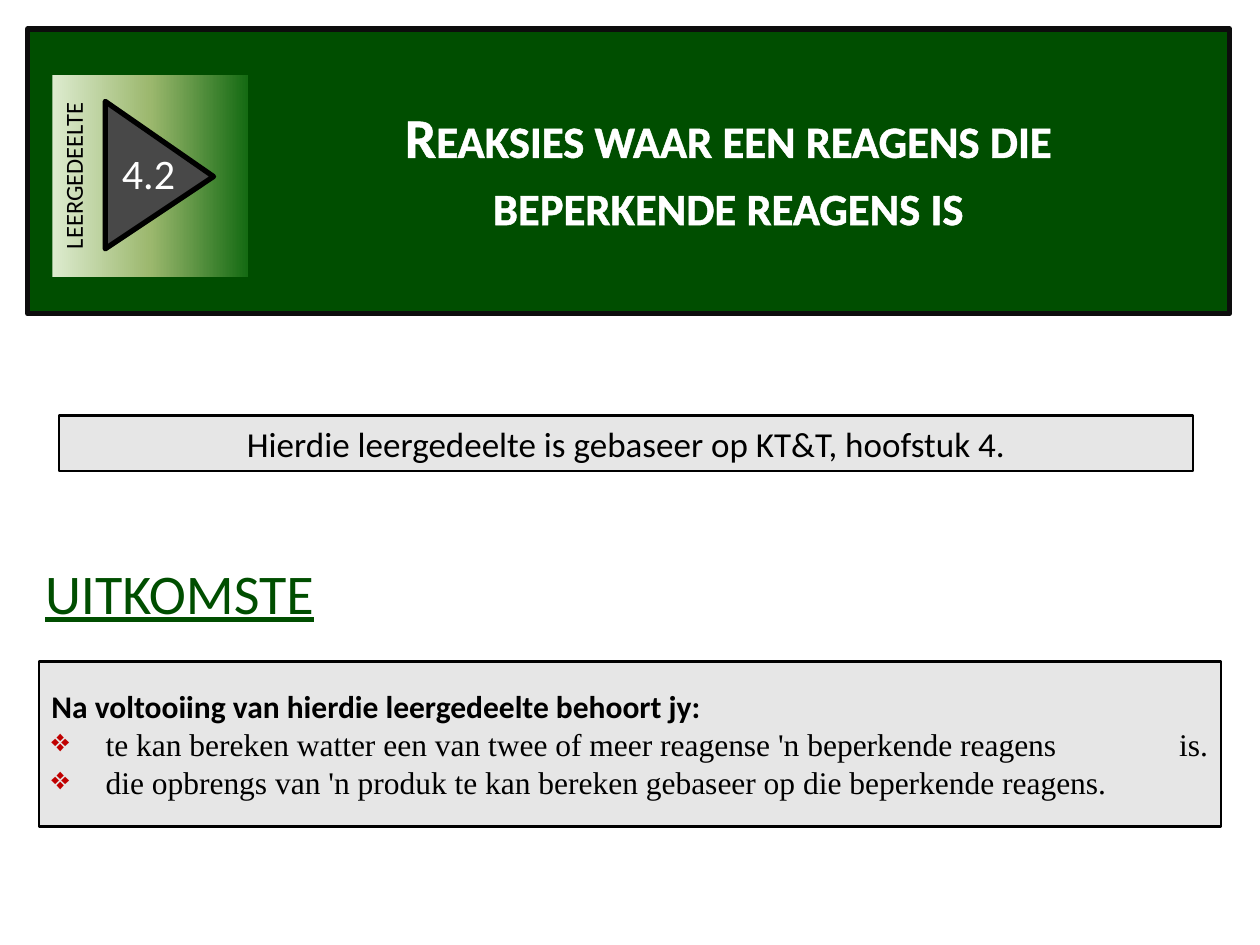
"""Build the opening slide of learning section 4.2 on limiting reagents."""
from lxml.etree import SubElement
from pptx import Presentation
from pptx.dml.color import RGBColor
from pptx.enum.shapes import MSO_SHAPE
from pptx.enum.text import MSO_ANCHOR, PP_ALIGN
from pptx.oxml import parse_xml
from pptx.oxml.ns import nsdecls, qn
from pptx.util import Inches, Pt

BLACK = RGBColor(0x00, 0x00, 0x00)
WHITE = RGBColor(0xFF, 0xFF, 0xFF)
GREEN = RGBColor(0x00, 0x4E, 0x00)
BANNER_EDGE = RGBColor(0x0D, 0x0D, 0x0D)
PANEL = RGBColor(0xE6, 0xE6, 0xE6)
ARROW = RGBColor(0x48, 0x48, 0x48)
BULLET = RGBColor(0xC0, 0x00, 0x00)
BADGE_STOPS = [
    (0, RGBColor(0xDD, 0xEB, 0xCF)),
    (50, RGBColor(0x9C, 0xB8, 0x6E)),
    (100, RGBColor(0x15, 0x6B, 0x13)),
]

TITLE = "Reaksies waar een reagens die beperkende reagens is"
SECTION_LABEL, SECTION_NUMBER = "LEERGEDEELTE", "4.2"
BASIS = "Hierdie leergedeelte is gebaseer op KT&T, hoofstuk 4."
HEADING = "UITKOMSTE"
INTRO = "Na voltooiing van hierdie leergedeelte behoort jy:"
OUTCOMES = [
    "\tte kan bereken watter een van twee of meer reagense 'n beperkende reagens \tis.",
    "\tdie opbrengs van 'n produk te kan bereken gebaseer op die beperkende reagens.",
]
OUTCOME_TABS = (0.43, 8.95)

PLACES = {
    "basis": (0.47, 3.3, 9, 0.44),
    "banner": (0.22, 0.23, 9.54, 2.26),
    "title": (2.11, 0.76, 7.34, 1.18),
    "badge": (0.39, 0.62, 1.6, 1.55),
    "arrow": (0.68, 0.96, 1.17, 0.86),
    "number": (0.87, 1.12, 0.63, 0.5),
    "heading": (0.26, 4.38, 2.67, 0.64),
    "outcomes": (0.31, 5.25, 9.38, 1.31),
}


def place(part):
    return [Inches(length) for length in PLACES[part]]


def add_box(shapes, part, fill=None, edge=None, width=1.5, kind=MSO_SHAPE.RECTANGLE, turn=0):
    box = shapes.add_shape(kind, *place(part))
    box.shadow.inherit = False
    box.rotation = turn
    if fill is not None:
        box.fill.solid()
        box.fill.fore_color.rgb = fill
    if edge is None:
        box.line.fill.background()
    else:
        box.line.color.rgb = edge
        box.line.width = Pt(width)
    return box


def add_label(shapes, part):
    return shapes.add_textbox(*place(part))


def write(holder, text, size=18, color=BLACK, font="Calibri", bold=False, underline=False,
          small_caps=False, outline=None, align=PP_ALIGN.LEFT, anchor=MSO_ANCHOR.TOP,
          wrap=True, bullet=None, tabs=(), more=False):
    frame = holder.text_frame
    frame.word_wrap = wrap
    frame.vertical_anchor = anchor
    paragraph = frame.add_paragraph() if more else frame.paragraphs[0]
    paragraph.alignment = align
    run = paragraph.add_run()
    run.text = text
    run.font.size, run.font.name = Pt(size), font
    run.font.bold, run.font.underline = bold, underline
    run.font.color.rgb = color
    if small_caps:
        run.font._element.set("cap", "small")
    if outline:
        edge, width = outline
        run.font._element.insert(0, parse_xml(
            f'<a:ln {nsdecls("a")} w="{Pt(width)}"><a:solidFill>'
            f'<a:srgbClr val="{edge}"/></a:solidFill></a:ln>'))
    properties = paragraph._p.get_or_add_pPr()
    if bullet:
        mark, mark_color = bullet
        properties.set("marL", "0")
        properties.set("indent", "0")
        SubElement(SubElement(properties, qn("a:buClr")), qn("a:srgbClr"), val=str(mark_color))
        SubElement(properties, qn("a:buChar"), char=mark)
    if tabs:
        stops = SubElement(properties, qn("a:tabLst"))
        for stop in tabs:
            SubElement(stops, qn("a:tab"), pos=str(Inches(stop)), algn="l")


def shade(box, stops, angle):
    box.fill.gradient()
    box.fill.gradient_angle = angle
    stop_list = box._element.spPr.find(qn("a:gradFill")).find(qn("a:gsLst"))
    for old in list(stop_list):
        stop_list.remove(old)
    for share, color in stops:
        stop = SubElement(stop_list, qn("a:gs"), pos=str(share * 1000))
        SubElement(stop, qn("a:srgbClr"), val=str(color))


def main():
    deck = Presentation()
    deck.slide_width, deck.slide_height = Inches(10), Inches(7.5)
    shapes = deck.slides.add_slide(deck.slide_layouts[6]).shapes

    basis = add_box(shapes, "basis", PANEL, BLACK)
    write(basis, BASIS, size=20, align=PP_ALIGN.CENTER, anchor=MSO_ANCHOR.MIDDLE)

    add_box(shapes, "banner", GREEN, BANNER_EDGE, width=3)
    write(add_label(shapes, "title"), TITLE, size=32, color=WHITE, bold=True,
          small_caps=True, outline=(WHITE, 0.75), align=PP_ALIGN.CENTER)

    section = shapes.add_group_shape().shapes
    badge = add_box(section, "badge", turn=270)
    shade(badge, BADGE_STOPS, angle=270)
    write(badge, SECTION_LABEL, size=14, align=PP_ALIGN.CENTER)
    arrow = add_box(section, "arrow", ARROW, BLACK, width=3,
                    kind=MSO_SHAPE.ISOSCELES_TRIANGLE, turn=90)
    arrow.adjustments[0] = 0.51
    write(add_label(section, "number"), SECTION_NUMBER, size=24, color=WHITE, wrap=False)

    write(add_label(shapes, "heading"), HEADING, size=32, color=GREEN, underline=True,
          outline=(BLACK, 0.25))

    outcomes = add_box(shapes, "outcomes", PANEL, BLACK)
    write(outcomes, INTRO, bold=True, anchor=MSO_ANCHOR.MIDDLE)
    for outcome in OUTCOMES:
        write(outcomes, outcome, font="Times New Roman", anchor=MSO_ANCHOR.MIDDLE,
              bullet=("❖", BULLET), tabs=OUTCOME_TABS, more=True)

    deck.save("out.pptx")


if __name__ == "__main__":
    main()
